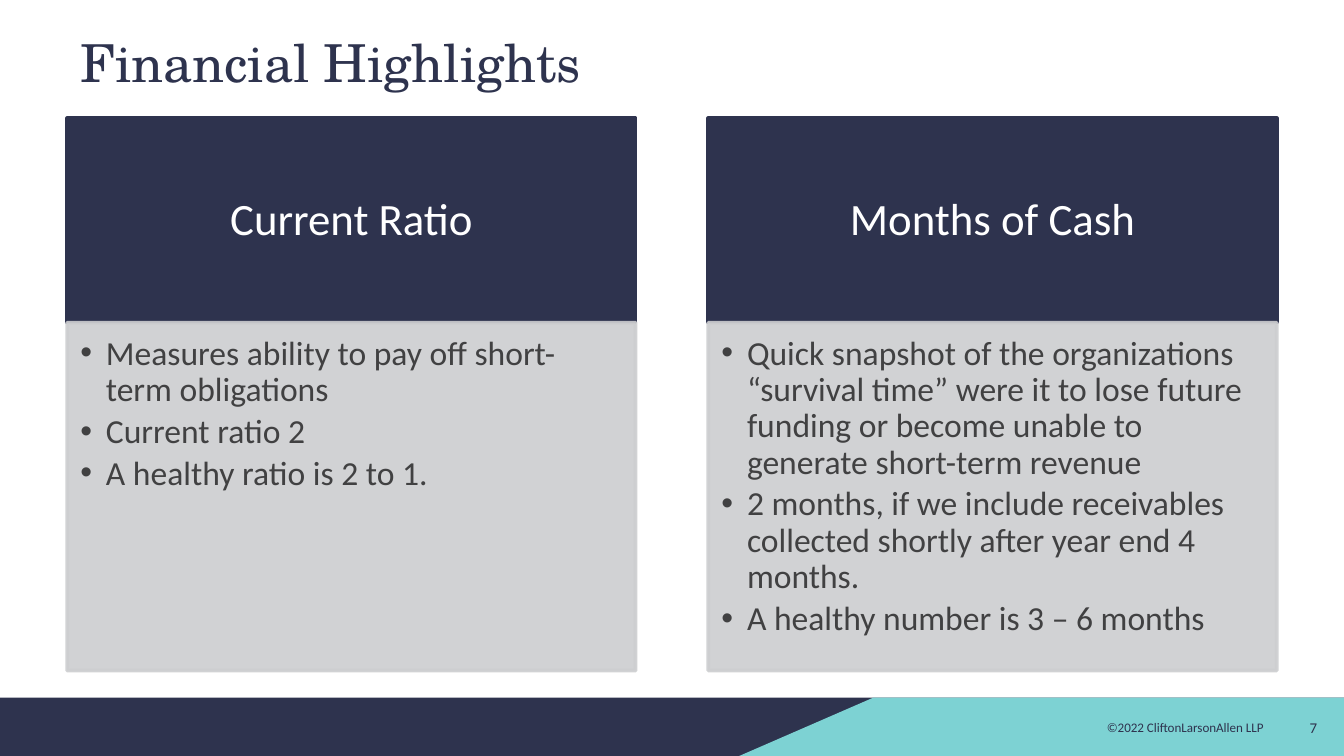
from dataclasses import dataclass

import lxml.etree
import pptx
import pptx.dml.color
import pptx.enum.shapes
import pptx.enum.text
import pptx.oxml.ns
import pptx.util

ALIGN = pptx.enum.text.PP_ALIGN
ANCHOR = pptx.enum.text.MSO_ANCHOR
RECTANGLE = pptx.enum.shapes.MSO_SHAPE.RECTANGLE
qn = pptx.oxml.ns.qn
COLUMNS, ROWS = 100, 56.25
CELL = pptx.util.Inches(0.1)


@dataclass(frozen=True)
class Theme:
    navy: str = "2E334E"
    teal: str = "7DD2D3"
    grey: str = "CDCED0"
    text: str = "414142"
    white: str = "FFFFFF"
    body_font: str = "Calibri"
    title_font: str = "TeX Gyre Schola"
    title_size: int = 28
    heading_size: int = 24
    bullet_size: int = 18
    number_size: int = 8
    copyright_size: int = 7


THEME = Theme()


@dataclass(frozen=True)
class Box:
    left: float
    top: float
    width: float
    height: float

    def inner(self, left, top, width, height):
        return Box(self.left + left * self.width, self.top + top * self.height,
                   width * self.width, height * self.height)

    def lengths(self):
        return [round(cells * CELL) for cells in
                (self.left, self.top, self.width, self.height)]


def paint(fill, color, opacity=100):
    fill.fore_color.rgb = pptx.dml.color.RGBColor.from_string(color)
    if opacity < 100:
        for element in fill._xPr.iter(qn("a:srgbClr")):
            lxml.etree.SubElement(element, qn("a:alpha"), val=str(opacity * 1000))


def style_shape(shape, color, opacity=100, line_width=0):
    shape.shadow.inherit = False
    shape.fill.solid()
    paint(shape.fill, color)
    if line_width:
        shape.line.width = pptx.util.Pt(line_width)
        shape.line.fill.solid()
        paint(shape.line.fill, color)
    else:
        shape.line.fill.background()
    if opacity < 100:
        for element in shape._element.spPr.iter(qn("a:srgbClr")):
            lxml.etree.SubElement(element, qn("a:alpha"), val=str(opacity * 1000))


def add_rectangle(slide, box, color, opacity=100, line_width=0):
    shape = slide.shapes.add_shape(RECTANGLE, *box.lengths())
    style_shape(shape, color, opacity, line_width)
    return shape


def set_frame(shape, anchor, insets):
    frame = shape.text_frame
    frame.word_wrap = True
    frame.vertical_anchor = anchor
    (frame.margin_left, frame.margin_top, frame.margin_right,
     frame.margin_bottom) = [pptx.util.Inches(inset) for inset in insets]
    return frame


def write(paragraph, text, size, color, align=ALIGN.LEFT, font=THEME.body_font):
    paragraph.alignment = align
    run = paragraph.add_run()
    run.text = text
    run.font.size = pptx.util.Pt(size)
    run.font.name = font
    run.font.color.rgb = pptx.dml.color.RGBColor.from_string(color)


def add_label(slide, box, text, size, align=ALIGN.LEFT, font=THEME.body_font):
    shape = slide.shapes.add_textbox(*box.lengths())
    frame = set_frame(shape, ANCHOR.MIDDLE, (0.1, 0.05, 0.1, 0.05))
    write(frame.paragraphs[0], text, size, THEME.navy, align, font)


def add_bullet(paragraph, text):
    paragraph.level = 1
    paragraph.line_spacing = 0.9
    paragraph.space_after = pptx.util.Pt(3)
    properties = paragraph._p.get_or_add_pPr()
    indent = pptx.util.Inches(0.19)
    properties.set("marL", str(indent))
    properties.set("indent", str(-indent))
    lxml.etree.SubElement(properties, qn("a:buFont"), typeface="Arial")
    lxml.etree.SubElement(properties, qn("a:buChar"), char="•")
    write(paragraph, text, THEME.bullet_size, THEME.text)


def add_footer(slide, box, number):
    add_rectangle(slide, box, THEME.navy)
    left, top, width, height = box.inner(0.55, 0, 0.45, 1).lengths()
    slant = round(0.1 * box.width * CELL)
    builder = slide.shapes.build_freeform(left + slant, top)
    builder.add_line_segments([(left + width, top), (left + width, top + height),
                               (left, top + height)], close=True)
    style_shape(builder.convert_to_shape(), THEME.teal)
    add_label(slide, box.inner(0.76, 0.12, 0.19, 0.78),
              "©2022 CliftonLarsonAllen LLP", THEME.copyright_size, ALIGN.RIGHT)
    add_label(slide, box.inner(0.95, 0.07, 0.04, 0.87), number,
              THEME.number_size, ALIGN.RIGHT)


def add_card(slide, box, heading, bullets):
    header_share = 0.37
    header = add_rectangle(slide, box.inner(0, 0, 1, header_share),
                           THEME.navy, line_width=2)
    frame = set_frame(header, ANCHOR.MIDDLE, (0.19, 0.11, 0.19, 0.11))
    frame.paragraphs[0].line_spacing = 0.9
    write(frame.paragraphs[0], heading, THEME.heading_size, THEME.white,
          ALIGN.CENTER)
    body = add_rectangle(slide, box.inner(0, header_share, 1, 1 - header_share),
                         THEME.grey, opacity=90, line_width=2)
    frame = set_frame(body, ANCHOR.TOP, (0.1, 0.1, 0.14, 0.16))
    for index, text in enumerate(bullets):
        add_bullet(frame.add_paragraph() if index else frame.paragraphs[0], text)


def add_cards(slide, box, cards):
    card_share = 0.47
    step = (1 - card_share) / (len(cards) - 1)
    for index, (heading, bullets) in enumerate(cards):
        add_card(slide, box.inner(index * step, 0, card_share, 1), heading, bullets)


def main():
    presentation = pptx.Presentation()
    presentation.slide_width = round(COLUMNS * CELL)
    presentation.slide_height = round(ROWS * CELL)
    slide = presentation.slides.add_slide(presentation.slide_layouts[6])
    margin = 5
    content_width = COLUMNS - 2 * margin
    footer_height = 4.35
    add_footer(slide, Box(0, ROWS - footer_height, COLUMNS, footer_height), "7")
    add_label(slide, Box(margin, 0.8, content_width, 7.5), "Financial Highlights",
              THEME.title_size, font=THEME.title_font)
    add_cards(slide, Box(margin, 8.8, content_width, 41.1), [
        ("Current Ratio", [
            "Measures ability to pay off short-term obligations",
            "Current ratio 2",
            "A healthy ratio is 2 to 1.",
        ]),
        ("Months of Cash", [
            "Quick snapshot of the organizations “survival time” were it to lose "
            "future funding or become unable to generate short-term revenue",
            "2 months, if we include receivables collected shortly after year "
            "end 4 months.",
            "A healthy number is 3 – 6 months",
        ]),
    ])
    presentation.save("out.pptx")


if __name__ == "__main__":
    main()
